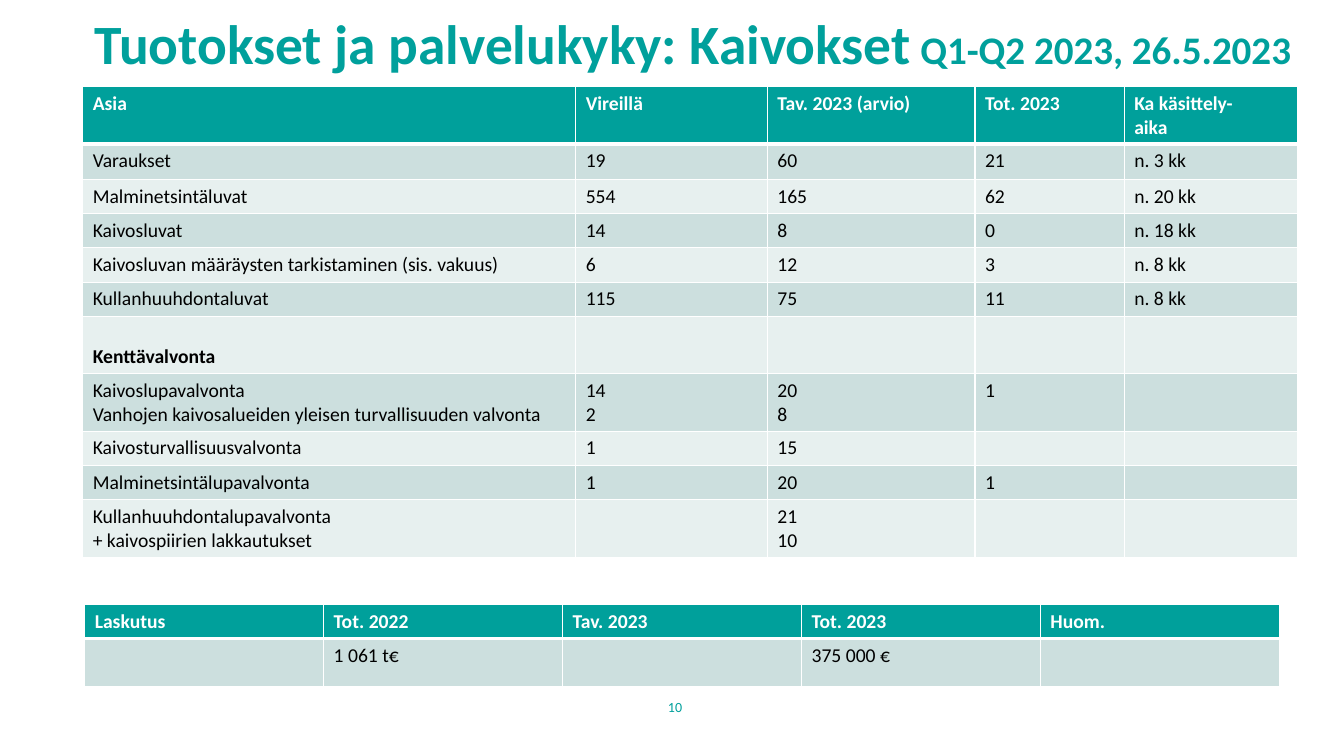
from dataclasses import dataclass

import pptx
import pptx.dml.color
import pptx.enum.text
import pptx.oxml
import pptx.oxml.ns
import pptx.util

Inches = pptx.util.Inches
Pt = pptx.util.Pt
Anchor = pptx.enum.text.MSO_ANCHOR
Align = pptx.enum.text.PP_ALIGN

TEAL, HEAD, DARK, LIGHT = "00A09C", "00A09B", "CCDFDE", "E7F0EF"
WHITE, BLACK = "FFFFFF", "000000"


@dataclass
class Grid:
    left: float
    top: float
    cols: list[float]
    rows: list[float]
    cells: list[list[str]]


# Line breaks within a cell separate paragraphs; \v breaks a line
MINES = Grid(0.82, 0.86, [4.89, 1.9, 2.06, 1.48, 1.72],
             [0.57, 0.35] + [0.34] * 4 + [0.57, 0.57, 0.34, 0.34, 0.57], [
    ["Asia", "Vireillä", "Tav. 2023 (arvio)", "Tot. 2023", "Ka käsittely-\vaika"],
    ["Varaukset", "19", "60", "21", "n. 3 kk"],
    ["Malminetsintäluvat", "554", "165", "62", "n. 20 kk"],
    ["Kaivosluvat", "14", "8", "0", "n. 18 kk"],
    ["Kaivosluvan määräysten tarkistaminen (sis. vakuus)", "6", "12", "3", "n. 8 kk"],
    ["Kullanhuuhdontaluvat", "115", "75", "11", "n. 8 kk"],
    ["Kenttävalvonta", "", "", "", ""],
    ["Kaivoslupavalvonta\nVanhojen kaivosalueiden yleisen turvallisuuden valvonta",
     "14\n2", "20\n8", "1", ""],
    ["Kaivosturvallisuusvalvonta", "1", "15", "", ""],
    ["Malminetsintälupavalvonta", "1", "20", "1", ""],
    ["Kullanhuuhdontalupavalvonta\n+ kaivospiirien lakkautukset", "", "21\n10", "", ""],
])
BILLS = Grid(0.84, 6, [2.37] * 5, [0.33, 0.48], [
    ["Laskutus", "Tot. 2022", "Tav. 2023", "Tot. 2023", "Huom."],
    ["", "1 061 t€", "", "375 000 €", ""],
])
SECTION = "Kenttävalvonta"


def rgb(code: str) -> pptx.dml.color.RGBColor:
    return pptx.dml.color.RGBColor.from_string(code)


def style(font, size: float, color: str, bold: bool = False) -> None:
    font.name = "Calibri"
    font.size = Pt(size)
    font.bold = bold
    font.color.rgb = rgb(color)


def edge(cell, side: str, width: float) -> None:
    ns = pptx.oxml.ns.nsdecls("a")
    cell._tc.get_or_add_tcPr().append(pptx.oxml.parse_xml(
        f'<a:ln{side} {ns} w="{Pt(width)}"><a:solidFill>'
        f'<a:srgbClr val="{WHITE}"/></a:solidFill></a:ln{side}>'))


def draw(slide, grid: Grid) -> None:
    table = slide.shapes.add_table(
        len(grid.rows), len(grid.cols), Inches(grid.left), Inches(grid.top),
        Inches(sum(grid.cols)), Inches(sum(grid.rows))).table
    for col, width in zip(table.columns, grid.cols):
        col.width = Inches(width)
    for r, (row, height) in enumerate(zip(table.rows, grid.rows)):
        row.height = Inches(height)
        for cell, text in zip(row.cells, grid.cells[r]):
            # Borders come before the fill
            widths = {"L": 1, "R": 1, "T": 3 if r == 1 else 1, "B": 3 if r == 0 else 1}
            for side, width in widths.items():
                edge(cell, side, width)
            cell.fill.solid()
            cell.fill.fore_color.rgb = rgb(HEAD if r == 0 else DARK if r % 2 else LIGHT)
            cell.text = text
            if text == SECTION:
                cell.vertical_anchor = Anchor.BOTTOM
            for para in cell.text_frame.paragraphs:
                style(para.font, 14, BLACK if r else WHITE, r == 0 or text == SECTION)


def label(slide, left: float, top: float, width: float, height: float, anchor):
    box = slide.shapes.add_textbox(Inches(left), Inches(top), Inches(width), Inches(height))
    frame = box.text_frame
    frame.word_wrap = True
    frame.vertical_anchor = anchor
    return frame.paragraphs[0]


def main() -> None:
    deck = pptx.Presentation()
    deck.slide_width, deck.slide_height = Inches(13.33), Inches(7.5)
    slide = deck.slides.add_slide(deck.slide_layouts[6])

    # Title
    title = label(slide, 0.84, 0.15, 12.3, 0.63, Anchor.MIDDLE)
    title.line_spacing = 0.9
    for text, size in (("Tuotokset ja palvelukyky: Kaivokset", 39.6),
                       (" Q1-Q2 2023, 26.5.2023", 27.9)):
        run = title.add_run()
        run.text = text
        style(run.font, size, TEAL, True)

    # Tables
    for grid in (MINES, BILLS):
        draw(slide, grid)

    # Page number
    page = label(slide, 6.17, 6.81, 1.05, 0.34, Anchor.BOTTOM)
    page.text = "10"
    page.alignment = Align.CENTER
    style(page.font, 10, TEAL)

    deck.save("out.pptx")


if __name__ == "__main__":
    main()
